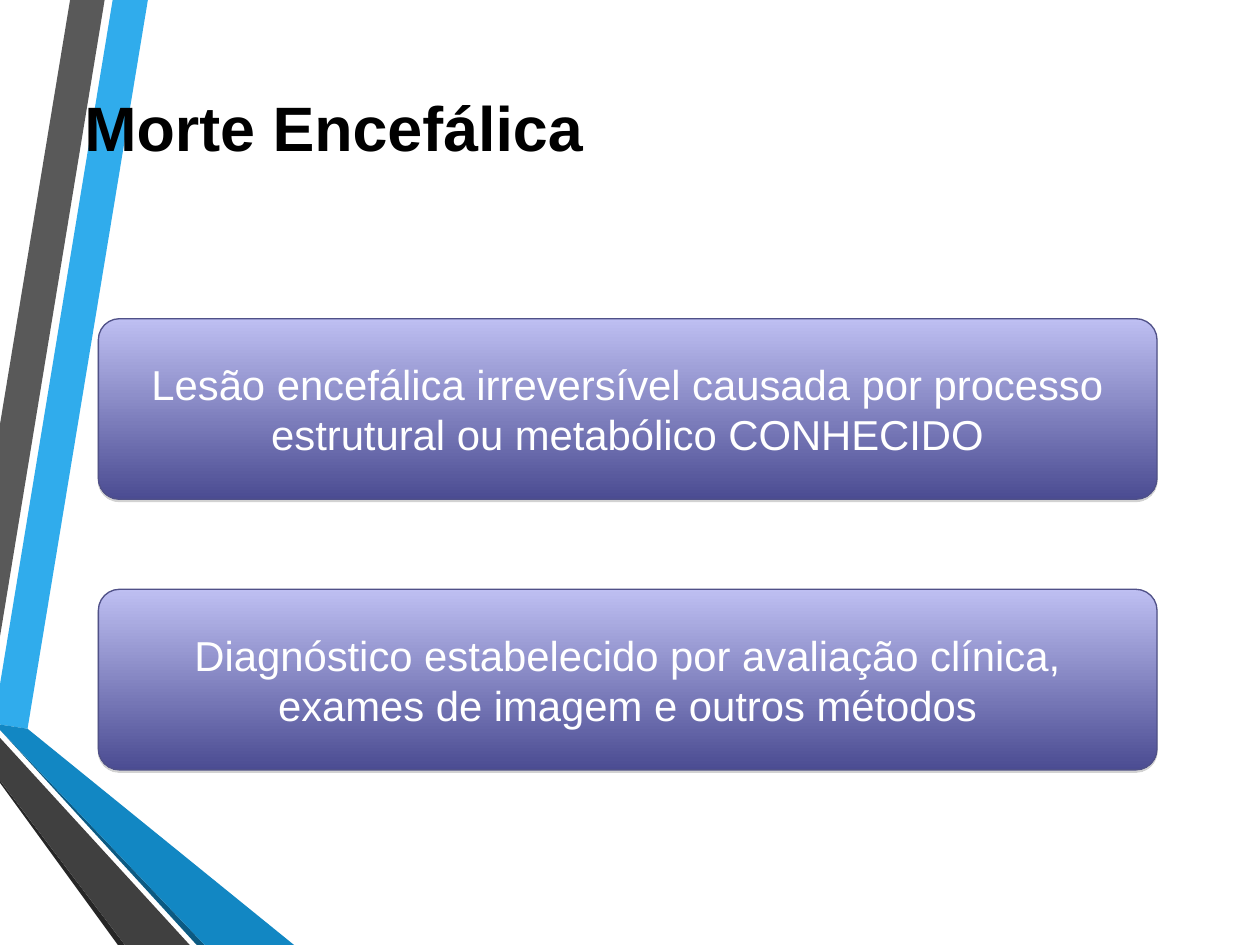
"""Build the "Morte Encefálica" slide with its ribbons and two statement boxes."""
from lxml import etree
from pptx import Presentation
from pptx.dml.color import RGBColor
from pptx.enum.shapes import MSO_SHAPE
from pptx.enum.text import MSO_ANCHOR, PP_ALIGN
from pptx.oxml.ns import qn
from pptx.util import Cm, Pt

ROUNDED_RECTANGLE = MSO_SHAPE.ROUNDED_RECTANGLE
MIDDLE = MSO_ANCHOR.MIDDLE
CENTER = PP_ALIGN.CENTER

SKY_BLUE = RGBColor(0x30, 0xAC, 0xEC)
GRAY = RGBColor(0x59, 0x59, 0x59)
NEAR_BLACK = RGBColor(0x26, 0x26, 0x26)
DEEP_BLUE = RGBColor(0x0C, 0x5A, 0x82)
BLUE = RGBColor(0x12, 0x87, 0xC3)
CHARCOAL = RGBColor(0x40, 0x40, 0x40)
LAVENDER = RGBColor(0xBE, 0xBF, 0xF2)
INDIGO = RGBColor(0x4B, 0x4C, 0x92)
BOX_LINE = RGBColor(0x50, 0x51, 0x88)
SHADOW_GRAY = RGBColor(0x80, 0x80, 0x80)
WHITE = RGBColor(0xFF, 0xFF, 0xFF)
BLACK = RGBColor(0, 0, 0)

FONT = "Arial"
SLIDE_WIDTH, SLIDE_HEIGHT = 36.12, 27.1
BOX_TOP, BOX_PITCH = 9.14, 7.76

RIBBONS = [
    (SKY_BLUE, [(0, 19.63), (0, 20.78), (0.79, 20.9), (4.24, 0), (3.23, 0)]),
    (GRAY, [(3, 0), (2.01, 0), (0, 12.17), (0, 18.26)]),
    (NEAR_BLACK, [(0, 22.38), (0, 22.45), (3.38, SLIDE_HEIGHT), (3.58, SLIDE_HEIGHT)]),
    (DEEP_BLUE, [(0, 20.93), (5.64, SLIDE_HEIGHT), (5.87, SLIDE_HEIGHT)]),
    (BLUE, [(0, 20.93), (5.87, SLIDE_HEIGHT), (8.43, SLIDE_HEIGHT), (0.79, 20.9), (0, 20.78)]),
    (CHARCOAL, [(0, 22.38), (3.58, SLIDE_HEIGHT), (5.44, SLIDE_HEIGHT), (0, 21.16)]),
]
STATEMENTS = [
    "Lesão encefálica irreversível causada por processo estrutural ou metabólico CONHECIDO",
    "Diagnóstico estabelecido por avaliação clínica, exames de imagem e outros métodos",
]


def add_ribbon(slide, color, points):
    """Draw one closed, filled ribbon from points in centimetres."""
    corners = [(Cm(x), Cm(y)) for x, y in points]
    builder = slide.shapes.build_freeform(*corners[0])
    builder.add_line_segments(corners[1:], close=True)
    shape = builder.convert_to_shape()
    shape.shadow.inherit = False
    shape.fill.solid()
    shape.fill.fore_color.rgb = color
    shape.line.fill.background()


def add_drop_shadow(shape):
    """Give the shape a thin translucent shadow below it."""
    shape.shadow.inherit = False
    effects = shape.element.spPr.find(qn("a:effectLst"))
    shadow = etree.SubElement(effects, qn("a:outerShdw"), blurRad="0",
                              dist=str(Pt(1.8)), dir="5400000", rotWithShape="0")
    color = etree.SubElement(shadow, qn("a:srgbClr"), val=str(SHADOW_GRAY))
    etree.SubElement(color, qn("a:alpha"), val="35000")


def write_text(shape, text, size, color, margin):
    """Fill the shape's text frame and return its paragraph."""
    frame = shape.text_frame
    frame.word_wrap = True
    frame.margin_left = frame.margin_right = Cm(margin)
    frame.margin_top = frame.margin_bottom = Cm(0.2)
    paragraph = frame.paragraphs[0]
    paragraph.text = text
    paragraph.font.name = FONT
    paragraph.font.size = Pt(size)
    paragraph.font.color.rgb = color
    return paragraph


def add_statement(slide, top, text):
    """Add a rounded gradient box with a centred statement."""
    shape = slide.shapes.add_shape(ROUNDED_RECTANGLE, Cm(2.82), Cm(top), Cm(30.35), Cm(5.18))
    shape.adjustments[0] = 0.117
    shape.fill.gradient()
    shape.fill.gradient_angle = 270
    for stop, color in zip(shape.fill.gradient_stops, (LAVENDER, INDIGO)):
        stop.color.rgb = color
    shape.line.color.rgb = BOX_LINE
    shape.line.width = Pt(1.07)
    add_drop_shadow(shape)
    paragraph = write_text(shape, text, 34, WHITE, 0.43)
    paragraph.alignment = CENTER
    shape.text_frame.vertical_anchor = MIDDLE


def add_title(slide, text):
    """Add the bold slide title."""
    shape = slide.shapes.add_textbox(Cm(2.06), Cm(2.34), Cm(17.12), Cm(2.57))
    paragraph = write_text(shape, text, 51, BLACK, 0.36)
    paragraph.font.bold = True


def main():
    """Assemble and save the presentation."""
    presentation = Presentation()
    presentation.slide_width = Cm(SLIDE_WIDTH)
    presentation.slide_height = Cm(SLIDE_HEIGHT)
    slide = presentation.slides.add_slide(presentation.slide_layouts[6])
    for color, points in RIBBONS:
        add_ribbon(slide, color, points)
    for index, text in enumerate(STATEMENTS):
        add_statement(slide, BOX_TOP + index * BOX_PITCH, text)
    add_title(slide, "Morte Encefálica")
    presentation.save("out.pptx")


if __name__ == "__main__":
    main()
